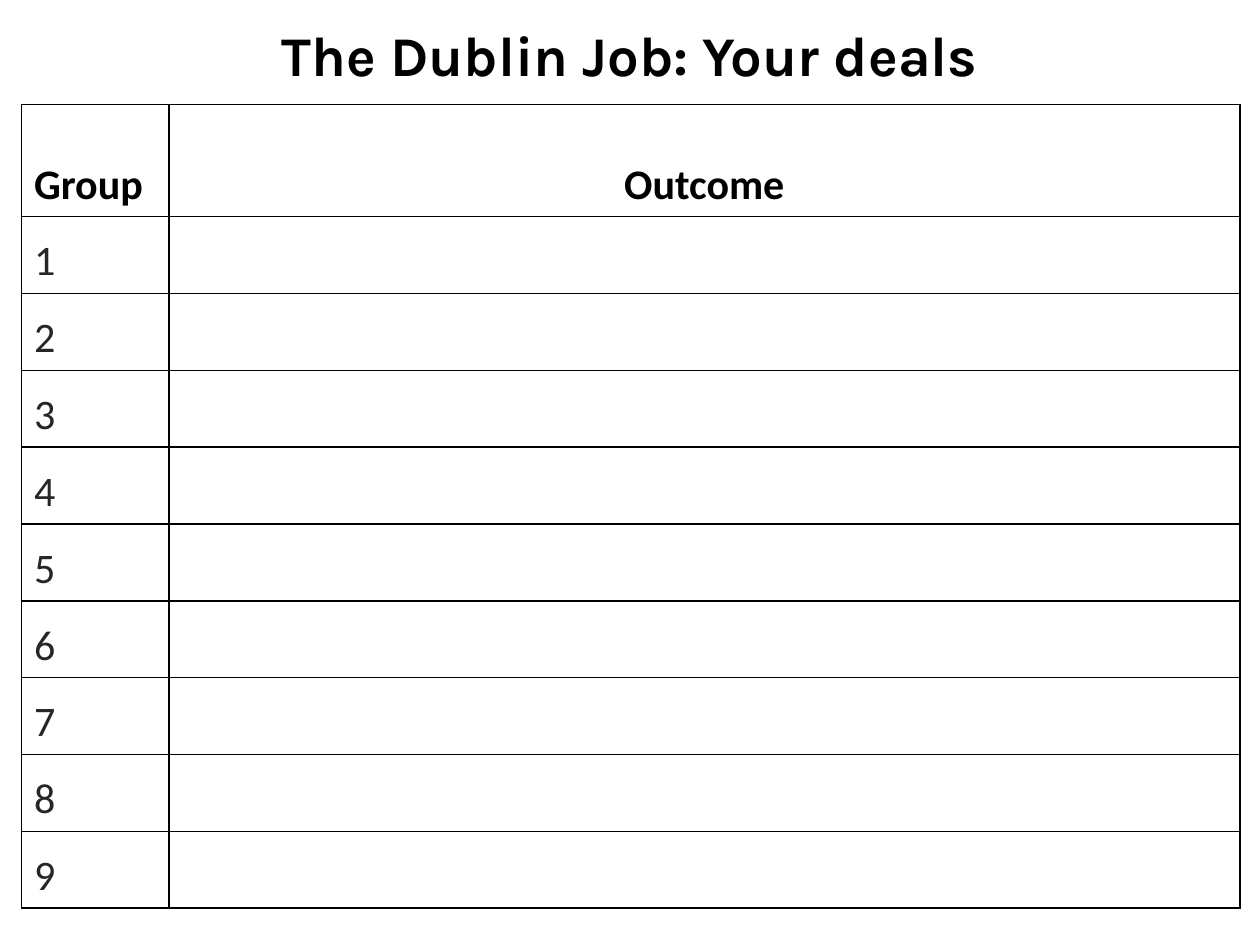
from lxml import etree
from pptx import Presentation
from pptx import util as u
from pptx.dml.color import RGBColor
from pptx.enum import text
from pptx.oxml.ns import qn

COLORS = {"ink": "000000", "number": "262626", "paper": "FFFFFF"}


def write(frame, words, font="Calibri", size=24, color="ink", bold=False,
          align=text.PP_ALIGN.LEFT):
    para = frame.paragraphs[0]
    para.alignment = align
    span = para.add_run()
    span.text = words
    span.font.name = font
    span.font.size = u.Pt(size)
    span.font.bold = bold
    span.font.color.rgb = RGBColor.from_string(COLORS[color])


class DealSheet:
    title_font = "Karla"
    border_width = u.Pt(1)

    def __init__(self, deck):
        self.page = deck.slides.add_slide(deck.slide_layouts[5])

    def title(self, words, left, top, width, height):
        box = self.page.shapes.title
        box.left, box.top = u.Inches(left), u.Inches(top)
        box.width, box.height = u.Inches(width), u.Inches(height)
        frame = box.text_frame
        frame.word_wrap = True
        frame.auto_size = text.MSO_AUTO_SIZE.SHAPE_TO_FIT_TEXT
        frame.vertical_anchor = text.MSO_ANCHOR.TOP
        write(frame, words, font=self.title_font, size=32, bold=True,
              align=text.PP_ALIGN.CENTER)

    def table(self, left, top, widths, heights):
        frame = self.page.shapes.add_table(
            len(heights), len(widths), u.Inches(left), u.Inches(top),
            u.Inches(sum(widths)), u.Inches(sum(heights)))
        grid = frame.table
        grid.first_row = grid.horz_banding = False
        for column, width in zip(grid.columns, widths):
            column.width = u.Inches(width)
        for row, height in zip(grid.rows, heights):
            row.height = u.Inches(height)
        for cell in grid.iter_cells():
            self.style_cell(cell)
        return grid

    def style_cell(self, cell):
        cell.vertical_anchor = text.MSO_ANCHOR.BOTTOM
        cell.margin_left = cell.margin_right = u.Inches(0.1)
        cell.margin_top = cell.margin_bottom = u.Inches(0.05)
        properties = cell._tc.get_or_add_tcPr()
        for side in ("a:lnL", "a:lnR", "a:lnT", "a:lnB"):
            line = etree.SubElement(properties, qn(side), w=str(self.border_width))
            fill = etree.SubElement(line, qn("a:solidFill"))
            etree.SubElement(fill, qn("a:srgbClr"), val=COLORS["ink"])
        cell.fill.solid()
        cell.fill.fore_color.rgb = RGBColor.from_string(COLORS["paper"])


def main():
    deck = Presentation()
    deck.slide_width, deck.slide_height = u.Inches(10), u.Inches(7.5)
    sheet = DealSheet(deck)
    groups = range(1, 10)
    grid = sheet.table(0.17, 0.83, widths=[1.17, 8.5],
                       heights=[0.89] + [0.61] * len(groups))
    write(grid.cell(0, 0).text_frame, "Group", bold=True)
    write(grid.cell(0, 1).text_frame, "Outcome", bold=True,
          align=text.PP_ALIGN.CENTER)
    for group in groups:
        write(grid.cell(group, 0).text_frame, str(group), color="number")
    sheet.title("The Dublin Job: Your deals", 0, 0.11, 10, 0.64)
    deck.save("out.pptx")


if __name__ == "__main__":
    main()
